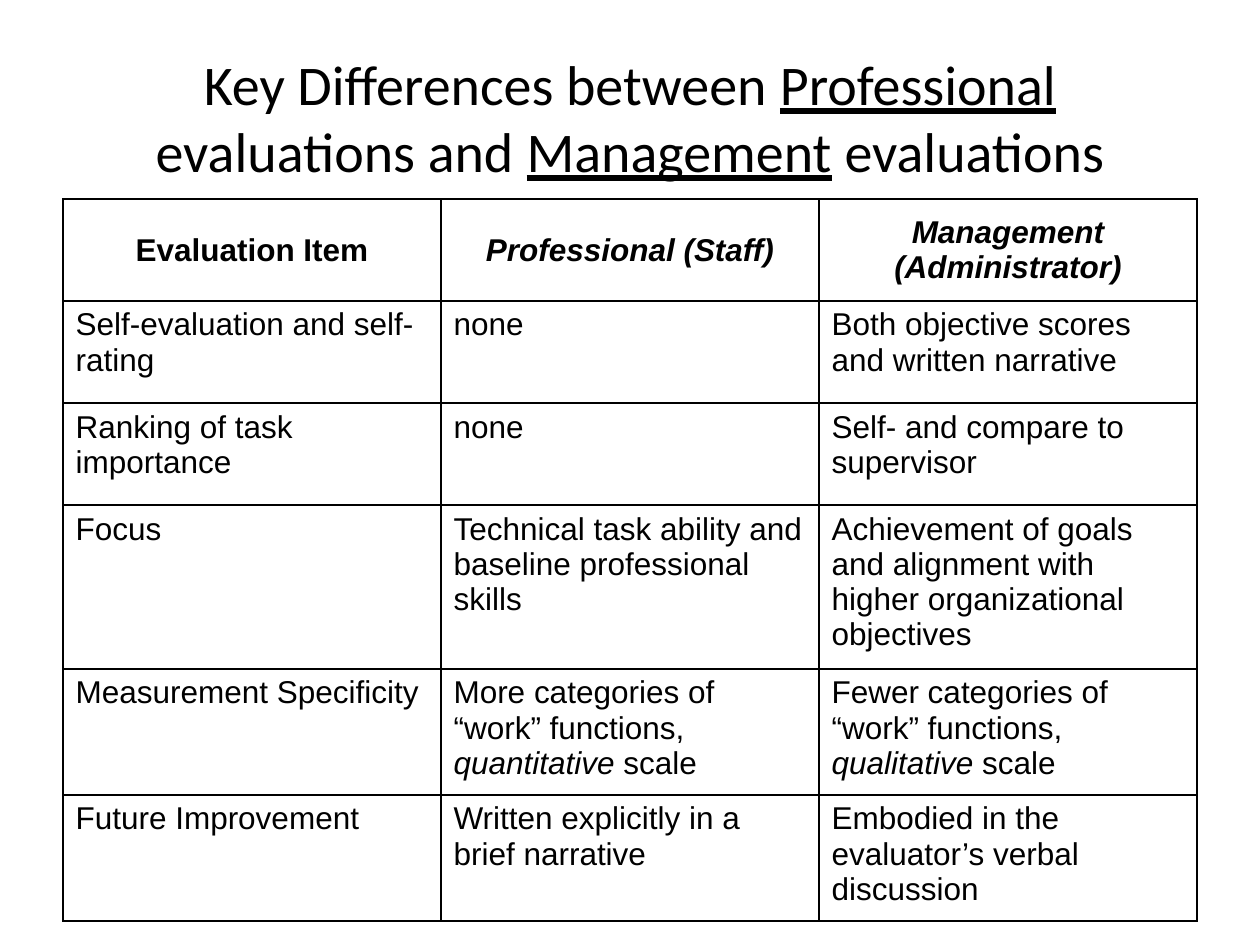
from lxml import etree
from pptx import Presentation
from pptx import util as u
from pptx.dml.color import RGBColor
from pptx.enum import text
from pptx.oxml import ns

BLACK = RGBColor(0x00, 0x00, 0x00)
WHITE = RGBColor(0xFF, 0xFF, 0xFF)

TITLE = "Key Differences between *Professional* evaluations and *Management* evaluations"
HEADINGS = ["Evaluation Item", "*Professional (Staff)*", "*Management*\n*(Administrator)*"]
ITEMS = [
    ["Self-evaluation and self-rating", "none",
     "Both objective scores and written narrative"],
    ["Ranking of task importance", "none", "Self- and compare to supervisor"],
    ["Focus", "Technical task ability and baseline professional skills",
     "Achievement of goals and alignment with higher organizational objectives"],
    ["Measurement Specificity",
     "More categories of “work” functions, *quantitative* scale",
     "Fewer categories of “work” functions, *qualitative* scale"],
    ["Future Improvement", "Written explicitly in a brief narrative",
     "Embodied in the evaluator’s verbal discussion"],
]
ROW_HEIGHTS = [0.81, 0.81, 0.81, 1.3, 1, 1]


def write_text(frame, words, *, size, name, bold=False, accent="italic",
               align=text.PP_ALIGN.LEFT):
    """Fill a text frame, giving the accent format to spans between asterisks."""
    for index, line in enumerate(words.split("\n")):
        para = frame.add_paragraph() if index else frame.paragraphs[0]
        para.alignment = align
        for position, part in enumerate(line.split("*")):
            if part:
                span = para.add_run()
                span.text = part
                span.font.size = u.Pt(size)
                span.font.name = name
                span.font.bold = bold
                span.font.color.rgb = BLACK
                setattr(span.font, accent, position % 2 == 1)


def draw_borders(cell, width=1):
    """Draw a solid black line on each side of a table cell."""
    properties = cell._tc.get_or_add_tcPr()
    for index, side in enumerate(("lnL", "lnR", "lnT", "lnB")):
        line = etree.Element(ns.qn(f"a:{side}"), w=str(u.Pt(width)))
        fill = etree.SubElement(line, ns.qn("a:solidFill"))
        etree.SubElement(fill, ns.qn("a:srgbClr"), val=str(BLACK))
        properties.insert(index, line)


def add_title(page, left, top, width, height):
    """Place the centred title in the given box."""
    box = page.shapes.add_textbox(left, top, width, height)
    frame = box.text_frame
    frame.word_wrap = True
    frame.vertical_anchor = text.MSO_ANCHOR.MIDDLE
    write_text(frame, TITLE, size=32, name="Calibri", accent="underline",
               align=text.PP_ALIGN.CENTER)


def add_comparison(page, left, top, width):
    """Place the comparison table with equal columns across the given width."""
    rows = [HEADINGS] + ITEMS
    height = u.Inches(sum(ROW_HEIGHTS))
    table = page.shapes.add_table(
        len(rows), len(HEADINGS), left, top, width, height).table
    table.first_row = table.horz_banding = False
    for row_index, (row, row_height) in enumerate(zip(rows, ROW_HEIGHTS)):
        table.rows[row_index].height = u.Inches(row_height)
        heading = row_index == 0
        for column_index, words in enumerate(row):
            cell = table.cell(row_index, column_index)
            cell.fill.solid()
            cell.fill.fore_color.rgb = WHITE
            cell.vertical_anchor = (
                text.MSO_ANCHOR.MIDDLE if heading else text.MSO_ANCHOR.TOP)
            align = text.PP_ALIGN.CENTER if heading else text.PP_ALIGN.LEFT
            write_text(cell.text_frame, words, size=18, name="Arial",
                       bold=heading, align=align)
            draw_borders(cell)


def main():
    """Build the slide and save the deck."""
    deck = Presentation()
    deck.slide_width, deck.slide_height = u.Inches(10), u.Inches(7.5)
    page = deck.slides.add_slide(deck.slide_layouts[6])
    left, width = u.Inches(0.5), u.Inches(9)
    add_title(page, left, u.Inches(0.3), width, u.Inches(1.25))
    add_comparison(page, left, u.Inches(1.58), width)
    deck.save("out.pptx")


if __name__ == "__main__":
    main()
